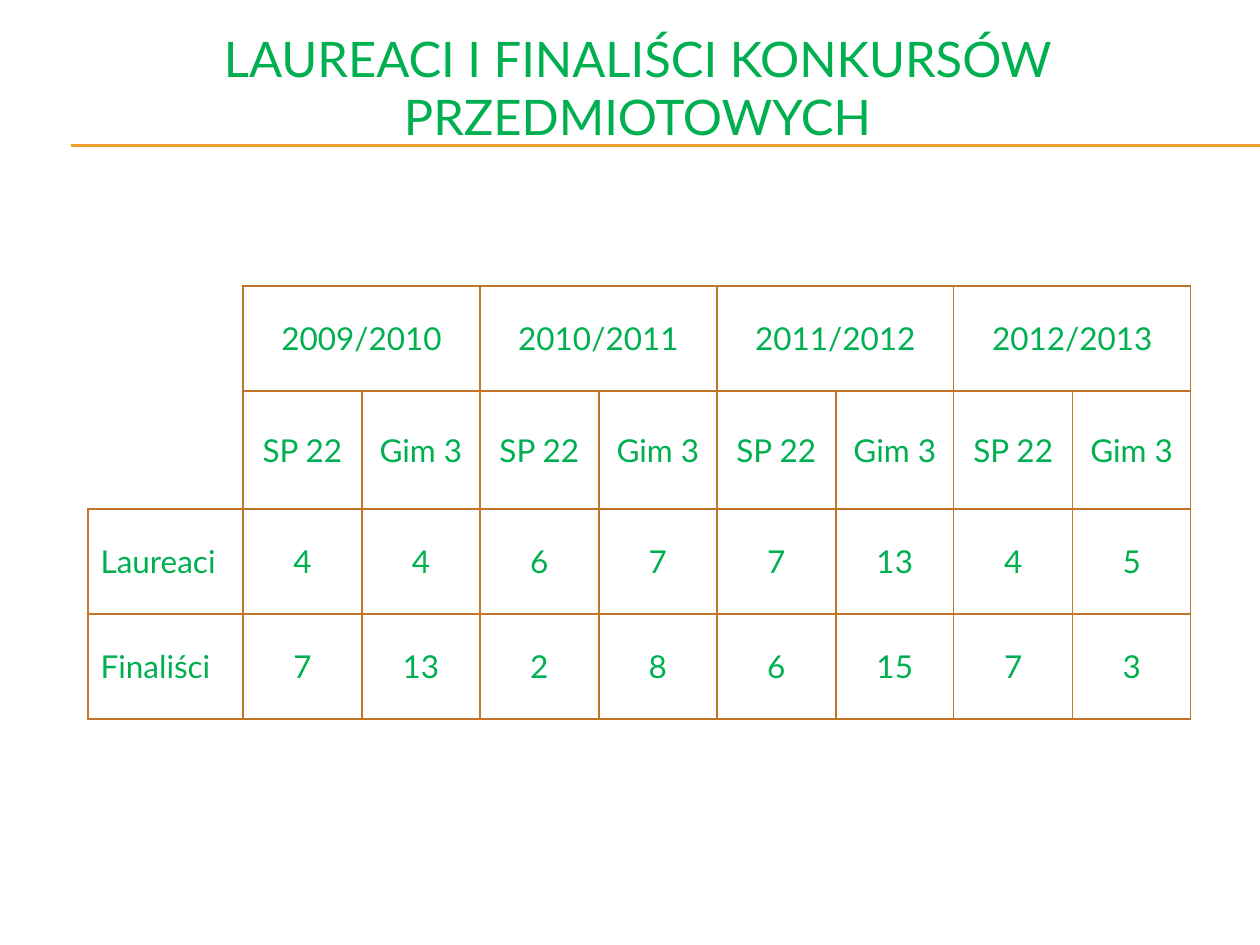
from pptx import Presentation
from pptx.dml.color import RGBColor
from pptx.enum.shapes import MSO_CONNECTOR
from pptx.enum.text import MSO_ANCHOR, PP_ALIGN
from pptx.oxml.ns import qn
from pptx.util import Pt
from lxml.etree import SubElement

SCALE = 914400 / 126
THEME = {
    "font": "Lato",
    "text": "00B050",
    "rule": "F0A22E",
    "border": "C17529",
    "title_size": 28,
    "cell_size": 18,
    "rule_width": 0.75,
    "border_width": 1,
}


def px(length):
    return round(length * SCALE)


def write(frame, text, size, align):
    frame.word_wrap = True
    para = frame.paragraphs[0]
    para.alignment = align
    span = para.add_run()
    span.text = text
    span.font.color.rgb = RGBColor.from_string(THEME["text"])
    for name, value in {"name": THEME["font"], "size": Pt(size)}.items():
        setattr(span.font, name, value)


deck = Presentation()
deck.slide_width, deck.slide_height = px(1260), px(945)
page = deck.slides.add_slide(deck.slide_layouts[6])

# Double rule under the title
for y in (145, 146):
    rule = page.shapes.add_connector(MSO_CONNECTOR.STRAIGHT, px(71), px(y), px(1260), px(y))
    rule.line.color.rgb = RGBColor.from_string(THEME["rule"])
    rule.line.width = Pt(THEME["rule_width"])
    SubElement(rule._element.spPr, qn("a:effectLst"))

# Title
title = page.shapes.add_textbox(px(39), px(29), px(1197), px(116))
title.text_frame.vertical_anchor = MSO_ANCHOR.MIDDLE
write(title.text_frame, "LAUREACI I FINALIŚCI KONKURSÓW PRZEDMIOTOWYCH",
      THEME["title_size"], PP_ALIGN.CENTER)

# Results: two schools for each school year
years = ["2009/2010", "2010/2011", "2011/2012", "2012/2013"]
rows = [
    [""] + [text for year in years for text in (year, "")],
    [""] + ["SP 22", "Gim 3"] * len(years),
    ["Laureaci", "4", "4", "6", "7", "7", "13", "4", "5"],
    ["Finaliści", "7", "13", "2", "8", "6", "15", "7", "3"],
]
widths = [155] + [119, 118] * len(years)
heights = [105, 118, 105, 105]

frame = page.shapes.add_table(len(rows), len(widths), px(88), px(286),
                              px(sum(widths)), px(sum(heights)))
table = frame.table
table.first_row = table.horz_banding = False
for column, width in zip(table.columns, widths):
    column.width = px(width)
for row, height in zip(table.rows, heights):
    row.height = px(height)

# Merged corner and year headings
table.cell(0, 0).merge(table.cell(1, 0))
for left in range(1, len(widths), 2):
    table.cell(0, left).merge(table.cell(0, left + 1))

# Cell text and borders; the corner has no outer edges
for r, texts in enumerate(rows):
    for c, text in enumerate(texts):
        cell = table.cell(r, c)
        cell.vertical_anchor = MSO_ANCHOR.MIDDLE
        if text:
            write(cell.text_frame, text, THEME["cell_size"],
                  PP_ALIGN.CENTER if c else PP_ALIGN.LEFT)
        corner = c == 0 and r < 2
        properties = cell._tc.get_or_add_tcPr()
        for side in ("lnL", "lnR", "lnT", "lnB"):
            edge = SubElement(properties, qn(f"a:{side}"), w=str(Pt(THEME["border_width"])))
            if corner and side in ("lnL", "lnT"):
                SubElement(edge, qn("a:noFill"))
            else:
                fill = SubElement(edge, qn("a:solidFill"))
                SubElement(fill, qn("a:srgbClr"), val=THEME["border"])
        cell.fill.background()

deck.save("out.pptx")
